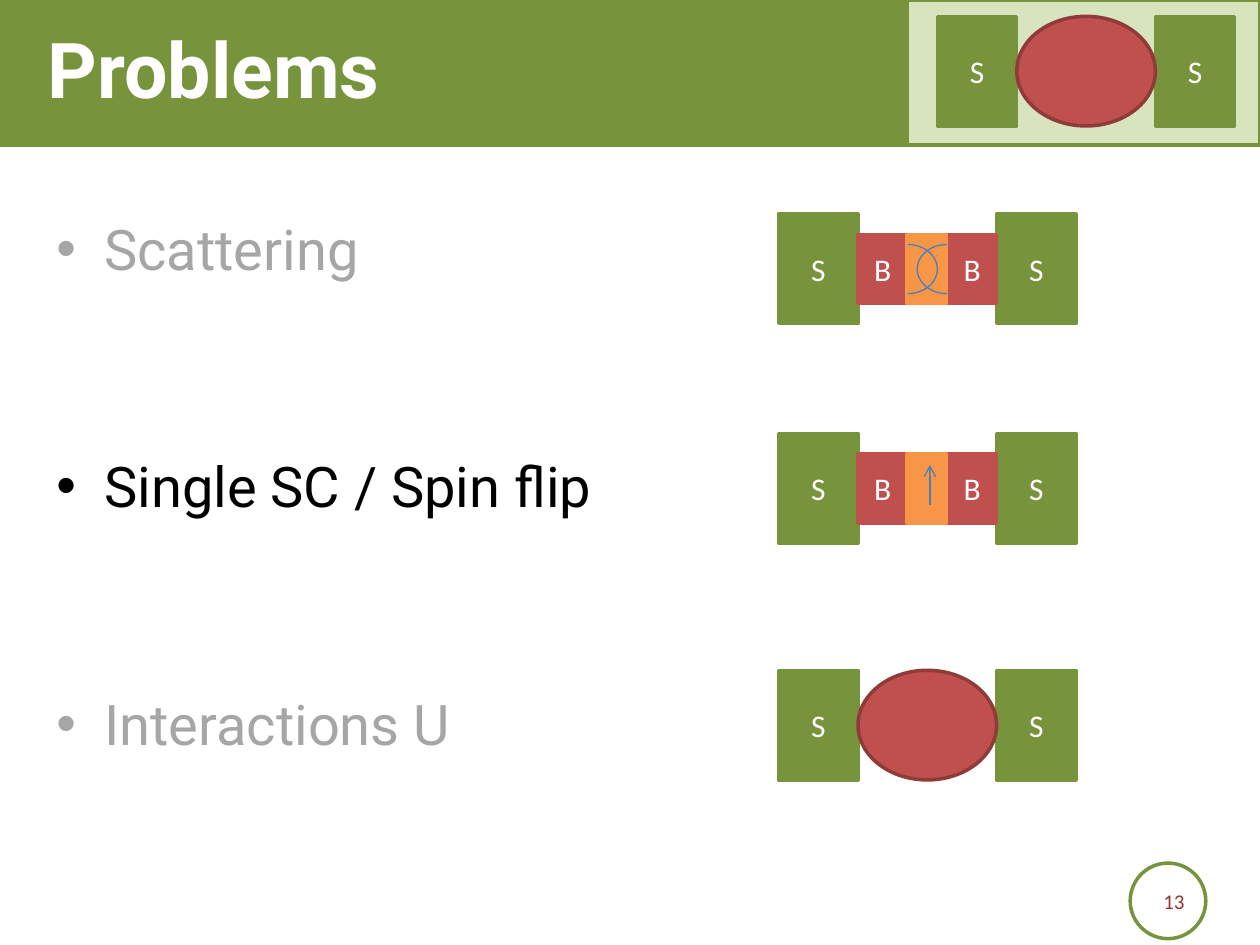
from lxml.etree import SubElement
from pptx import Presentation
from pptx.dml.color import RGBColor
from pptx.enum.shapes import MSO_CONNECTOR, MSO_SHAPE
from pptx.enum.text import MSO_ANCHOR, PP_ALIGN
from pptx.oxml.ns import qn
from pptx.util import Inches, Pt

COLORS = {
    "green": "77933C", "pale": "D7E4BD", "red": "C0504D", "dark red": "8E3B39",
    "orange": "F79646", "blue": "4B7EBC", "number": "953735",
    "white": "FFFFFF", "gray": "A6A6A6", "black": "000000",
}
FORMATS = {
    "title": {"name": "Roboto", "size": Pt(44), "bold": True},
    "bullet": {"name": "Roboto", "size": Pt(32)},
    "label": {"name": "Calibri", "size": Pt(18)},
    "number": {"name": "Calibri", "size": Pt(12)},
}


class JunctionSlide:
    """Draw on a slide whose grid has 100 columns and 75 rows."""

    def __init__(self, deck):
        self.column = deck.slide_width / 100
        self.row = deck.slide_height / 75
        self.page = deck.slides.add_slide(deck.slide_layouts[6])
        self.shapes = self.page.shapes

    def place(self, left, top, width, height):
        return [round(length * unit) for length, unit in zip(
            (left, top, width, height), (self.column, self.row) * 2)]

    def add_words(self, para, text, style, color, **layout):
        for name, value in layout.items():
            setattr(para, name, value)
        span = para.add_run()
        span.text = text
        for name, value in FORMATS[style].items():
            setattr(span.font, name, value)
        span.font.color.rgb = RGBColor.from_string(COLORS[color])

    def text_box(self, area, anchor=MSO_ANCHOR.MIDDLE):
        frame = self.shapes.add_textbox(*self.place(*area)).text_frame
        for name, value in {"word_wrap": True, "vertical_anchor": anchor}.items():
            setattr(frame, name, value)
        return frame

    def text(self, area, text, style, color, align):
        frame = self.text_box(area)
        self.add_words(frame.paragraphs[0], text, style, color, alignment=align)

    def bullets(self, area, items, gap):
        frame = self.text_box(area, MSO_ANCHOR.TOP)
        for index, (text, color) in enumerate(items):
            para = frame.add_paragraph() if index else frame.paragraphs[0]
            self.add_words(para, text, "bullet", color,
                           space_before=Pt(gap if index else 0))
            properties = para._p.get_or_add_pPr()
            for name, indent in {"marL": 0.38, "indent": -0.38}.items():
                properties.set(name, str(Inches(indent)))
            SubElement(properties, qn("a:buFont")).set("typeface", "Arial")
            SubElement(properties, qn("a:buChar")).set("char", "•")

    def shape(self, kind, area, fill, line, label="", weight=2):
        box = self.shapes.add_shape(kind, *self.place(*area))
        box.shadow.inherit = False
        if fill:
            box.fill.solid()
            box.fill.fore_color.rgb = RGBColor.from_string(COLORS[fill])
        else:
            box.fill.background()
        box.line.color.rgb = RGBColor.from_string(COLORS[line])
        box.line.width = Pt(weight)
        if label:
            box.text_frame.vertical_anchor = MSO_ANCHOR.MIDDLE
            self.add_words(box.text_frame.paragraphs[0], label, "label", "white",
                           alignment=PP_ALIGN.CENTER)
        return box

    def arc(self, area, flipped):
        arc = self.shape(MSO_SHAPE.ARC, area, None, "blue", weight=0.75)
        arc.adjustments[0], arc.adjustments[1] = 162, 54.29
        if flipped:
            arc._element.spPr.find(qn("a:xfrm")).set("flipH", "1")

    def arrow(self, left, bottom, top):
        start_x, start_y, end_x, end_y = self.place(left, bottom, left, top)
        arrow = self.shapes.add_connector(
            MSO_CONNECTOR.STRAIGHT, start_x, start_y, end_x, end_y)
        arrow.line.color.rgb = RGBColor.from_string(COLORS["blue"])
        arrow.line.width = Pt(0.75)
        outline = arrow._element.spPr.find(qn("a:ln"))
        SubElement(outline, qn("a:tailEnd")).set("type", "arrow")
        SubElement(arrow._element.spPr, qn("a:effectLst"))

    def junction(self, left, top, dot):
        self.shapes = self.page.shapes.add_group_shape().shapes
        for offset in (0, 17.3):
            self.shape(MSO_SHAPE.RECTANGLE, (left + offset, top, 6.3, 8.7),
                       "green", "green", "S")
        if dot:
            self.shape(MSO_SHAPE.OVAL, (left + 6.3, top, 11, 8.7), "red", "dark red")
        else:
            for offset in (6.3, 13.4):
                self.shape(MSO_SHAPE.RECTANGLE, (left + offset, top + 1.6, 3.9, 5.5),
                           "red", "red", "B")
            self.shape(MSO_SHAPE.RECTANGLE, (left + 10.2, top + 1.6, 3.1, 5.5),
                       "orange", "orange")

    def leave_group(self):
        self.shapes = self.page.shapes


def main():
    deck = Presentation()
    deck.slide_width, deck.slide_height = Inches(10), Inches(7.5)
    slide = JunctionSlide(deck)
    slide.shape(MSO_SHAPE.RECTANGLE, (0, 0, 100, 11.5), "green", "green")
    slide.shape(MSO_SHAPE.OVAL, (89.7, 68.5, 6, 6), None, "green")
    slide.shape(MSO_SHAPE.RECTANGLE, (72, 0, 28, 11.5), "pale", "green")
    slide.text((2.8, 0, 77.2, 10.7), "Problems", "title", "white", PP_ALIGN.LEFT)
    slide.bullets((3.5, 16.5, 55, 49.5), [
        ("Scattering", "gray"),
        ("Single SC / Spin flip", "black"),
        ("Interactions U", "gray"),
    ], gap=97.4)
    for left, top, dot in (
            (74.4, 1.3, True), (61.8, 53.2, True), (61.8, 34.4, False), (61.8, 17, False)):
        slide.junction(left, top, dot)
    for left, flipped in ((69.7, False), (72.8, True)):
        slide.arc((left, 19.4, 4.7, 3.9), flipped)
    slide.leave_group()
    slide.arrow(73.8, 40.1, 36.9)
    slide.text((87, 69.5, 8, 4), "13", "number", "number", PP_ALIGN.RIGHT)
    deck.save("out.pptx")


if __name__ == "__main__":
    main()
